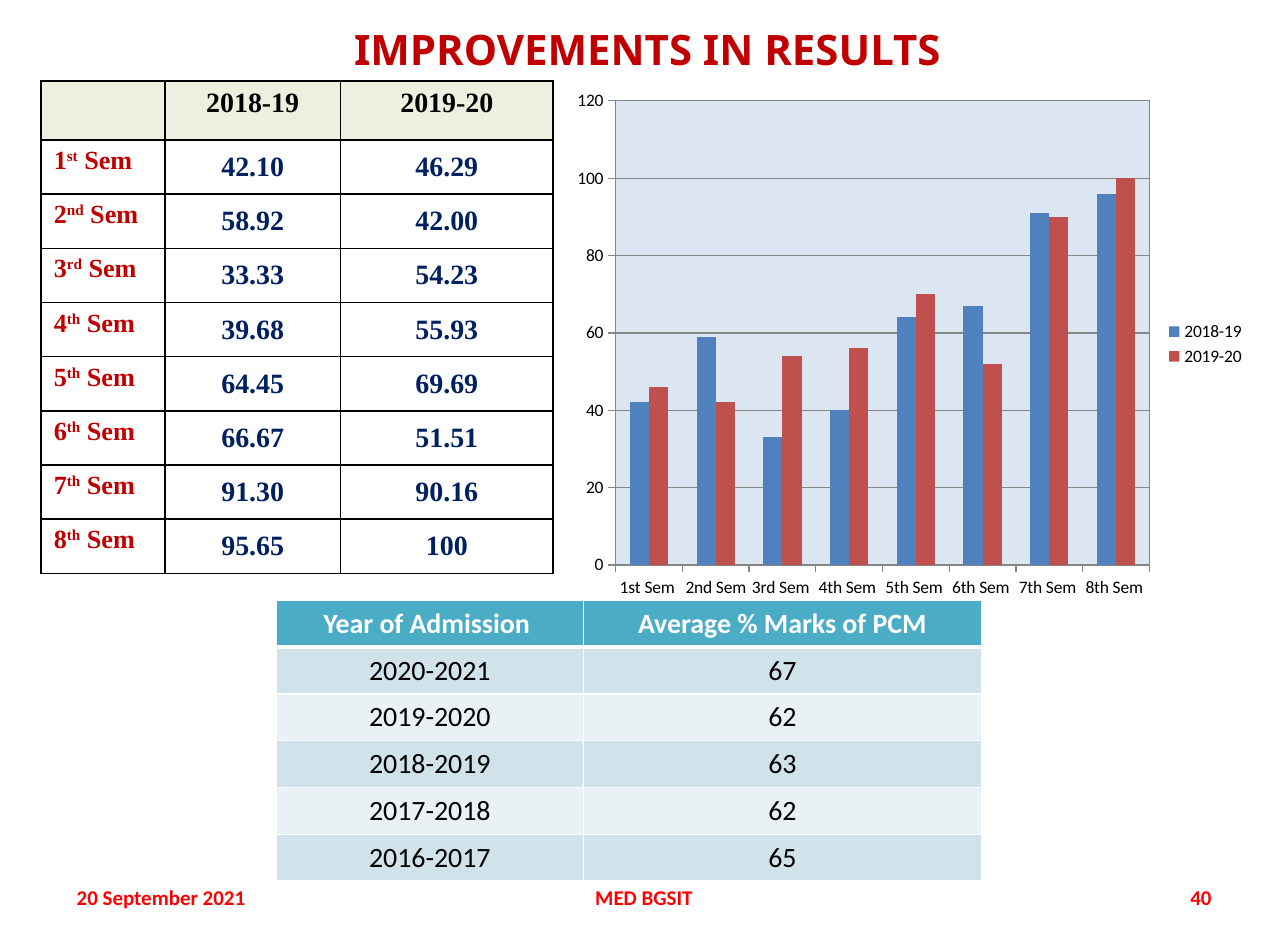
"""Build the slide that compares semester results and admission marks."""
from dataclasses import dataclass

from lxml.etree import SubElement
from pptx import Presentation
from pptx.chart.data import CategoryChartData
from pptx.dml.color import RGBColor
from pptx.enum.chart import XL_CHART_TYPE as ChartType
from pptx.enum.chart import XL_LEGEND_POSITION as LegendPosition
from pptx.enum.chart import XL_TICK_MARK as TickMark
from pptx.enum.text import MSO_ANCHOR as Anchor
from pptx.enum.text import MSO_AUTO_SIZE as AutoSize
from pptx.enum.text import PP_ALIGN as Align
from pptx.oxml.ns import qn
from pptx.util import Inches, Pt

WIDTH, HEIGHT = Inches(10.24), Inches(7.48)
PLAIN_TABLE_STYLE = "{2D5ABB26-0587-4C30-8999-92F81FD0307C}"

YEARS = ("2018-19", "2019-20")
SEMESTERS = [
    ("1", "st", "42.10", "46.29"),
    ("2", "nd", "58.92", "42.00"),
    ("3", "rd", "33.33", "54.23"),
    ("4", "th", "39.68", "55.93"),
    ("5", "th", "64.45", "69.69"),
    ("6", "th", "66.67", "51.51"),
    ("7", "th", "91.30", "90.16"),
    ("8", "th", "95.65", "100"),
]
ADMISSIONS = [
    ("Year of Admission ", "Average % Marks of PCM"),
    ("2020-2021", "67"),
    ("2019-2020", "62"),
    ("2018-2019", "63"),
    ("2017-2018", "62"),
    ("2016-2017", "65"),
]


@dataclass(frozen=True)
class Theme:
    """Colours, fonts and type sizes of the slide."""

    black: str = "000000"
    white: str = "FFFFFF"
    dark_red: str = "C00000"
    footer_red: str = "FF0000"
    navy: str = "002060"
    pale_green: str = "EBF1DE"
    teal: str = "4BACC6"
    bands: tuple = ("D0E3EA", "E9F1F5")
    plot: str = "DCE6F2"
    axis: str = "868686"
    series: tuple = ("4F81BD", "C0504D")
    title_font: str = "Noto Sans"
    body_font: str = "Calibri"
    results_font: str = "Times New Roman"
    title_size: int = 24
    table_size: int = 16
    semester_size: int = 15
    footer_size: int = 12
    chart_size: int = 10


THEME = Theme()


def across(percent):
    """Return a share of the slide's width."""
    return round(WIDTH * percent / 100)


def down(percent):
    """Return a share of the slide's height."""
    return round(HEIGHT * percent / 100)


def area(left, top, width, height):
    """Return a box given in percent of the slide."""
    return across(left), down(top), across(width), down(height)


def style_font(font, name, size, color, bold=False):
    """Set the look of a font."""
    font.name, font.size, font.bold = name, Pt(size), bold
    font.color.rgb = RGBColor.from_string(color)


def fill_solid(fill, color):
    """Fill with one colour."""
    fill.solid()
    fill.fore_color.rgb = RGBColor.from_string(color)


def add_solid_fill(parent, color):
    """Append a solid fill element."""
    SubElement(SubElement(parent, qn("a:solidFill")), qn("a:srgbClr"), val=color)


def write(frame, text, align, name, size, color, bold=False):
    """Write one paragraph into a text frame."""
    paragraph = frame.paragraphs[0]
    paragraph.alignment = align
    style_font(paragraph.font, name, size, color, bold)
    paragraph.add_run().text = text
    return paragraph


def set_title(slide, text):
    """Place and format the title."""
    title = slide.shapes.title
    title.left, title.top, title.width, title.height = area(15.15, 1.85, 70.2, 6.7)
    frame = title.text_frame
    frame.auto_size, frame.vertical_anchor = AutoSize.NONE, Anchor.TOP
    write(frame, text, Align.CENTER, THEME.title_font, THEME.title_size, THEME.dark_red, True)


def add_footer(slide, text, left, width, align):
    """Add one part of the footer line."""
    frame = slide.shapes.add_textbox(*area(left, 92.65, width, 5.35)).text_frame
    frame.word_wrap, frame.vertical_anchor = True, Anchor.MIDDLE
    write(frame, text, align, THEME.body_font, THEME.footer_size, THEME.footer_red, True)


def add_plain_table(slide, left, top, columns, rows):
    """Add an unstyled table with the given column widths and row heights."""
    box = area(left, top, sum(columns), sum(rows))
    table = slide.shapes.add_table(len(rows), len(columns), *box).table
    table._tbl.tblPr.find(qn("a:tableStyleId")).text = PLAIN_TABLE_STYLE
    table.horz_banding = False
    for column, width in zip(table.columns, columns):
        column.width = across(width)
    for row, height in zip(table.rows, rows):
        row.height = down(height)
    return table


def format_cell(cell, border, fill=None, top=1, bottom=1):
    """Set the borders of a cell, then its fill."""
    properties = cell._tc.get_or_add_tcPr()
    for side, width in (("lnL", 1), ("lnR", 1), ("lnT", top), ("lnB", bottom)):
        line = SubElement(properties, qn(f"a:{side}"), w=str(Pt(width)))
        add_solid_fill(line, border)
    if fill:
        fill_solid(cell.fill, fill)
    else:
        cell.fill.background()


def write_semester(cell, number, suffix):
    """Write a semester name with a raised ordinal suffix."""
    paragraph = write(cell.text_frame, number, Align.LEFT, THEME.results_font,
                      THEME.semester_size, THEME.dark_red, True)
    raised = paragraph.add_run()
    raised.text = suffix
    raised._r.get_or_add_rPr().set("baseline", "30000")
    paragraph.add_run().text = " Sem"


def add_results_table(slide):
    """Add the table of results by semester."""
    rows = [6.25] + [5.76] * len(SEMESTERS)
    table = add_plain_table(slide, 3.2, 8.62, [9.6, 13.65, 16.5], rows)
    for index, text in enumerate(("",) + YEARS):
        cell = table.cell(0, index)
        format_cell(cell, THEME.black, THEME.pale_green)
        if text:
            write(cell.text_frame, text, Align.CENTER, THEME.results_font,
                  THEME.table_size, THEME.black, True)
    for row, (number, suffix, *marks) in enumerate(SEMESTERS, 1):
        name_cell = table.cell(row, 0)
        format_cell(name_cell, THEME.black)
        write_semester(name_cell, number, suffix)
        for column, mark in enumerate(marks, 1):
            cell = table.cell(row, column)
            format_cell(cell, THEME.black)
            cell.vertical_anchor = Anchor.MIDDLE
            cell.margin_left = cell.margin_right = cell.margin_top = cell.margin_bottom = 0
            write(cell.text_frame, mark, Align.CENTER, THEME.results_font,
                  THEME.table_size, THEME.navy, True)


def add_admissions_table(slide):
    """Add the banded table of marks by year of admission."""
    table = add_plain_table(slide, 21.45, 63.8, [23.85, 30.9], [4.68] * len(ADMISSIONS))
    for row, texts in enumerate(ADMISSIONS):
        header = row == 0
        fill = THEME.teal if header else THEME.bands[(row - 1) % 2]
        for column, text in enumerate(texts):
            cell = table.cell(row, column)
            format_cell(cell, THEME.white, fill, 3 if row == 1 else 1, 3 if header else 1)
            write(cell.text_frame, text, Align.CENTER, THEME.body_font, THEME.table_size,
                  THEME.white if header else THEME.black, header)


def add_results_chart(slide):
    """Add the column chart of results by semester."""
    data = CategoryChartData()
    data.categories = [f"{number}{suffix} Sem " for number, suffix, *_ in SEMESTERS]
    for index, year in enumerate(YEARS, 2):
        data.add_series(f"{year} ", [round(float(semester[index])) for semester in SEMESTERS])
    box = area(43.75, 8.56, 54.2, 56)
    chart = slide.shapes.add_chart(ChartType.COLUMN_CLUSTERED, *box, data).chart
    style_font(chart.font, THEME.body_font, THEME.chart_size, THEME.black)
    chart.has_title = False
    chart.has_legend = True
    chart.legend.position, chart.legend.include_in_layout = LegendPosition.RIGHT, False
    plot = chart.plots[0]
    plot.gap_width, plot.overlap, plot.vary_by_categories = 150, 0, False
    for series, color in zip(plot.series, THEME.series):
        fill_solid(series.format.fill, color)
    value_axis = chart.value_axis
    value_axis.minimum_scale, value_axis.maximum_scale, value_axis.major_unit = 0, 120, 20
    value_axis.has_major_gridlines = True
    for axis in (chart.category_axis, value_axis):
        axis.major_tick_mark = TickMark.OUTSIDE
    for item in (chart.category_axis, value_axis, value_axis.major_gridlines):
        item.format.line.color.rgb = RGBColor.from_string(THEME.axis)
    properties = SubElement(chart._chartSpace.chart.plotArea, qn("c:spPr"))
    add_solid_fill(properties, THEME.plot)
    add_solid_fill(SubElement(properties, qn("a:ln")), THEME.axis)


def main():
    """Build and save the slide."""
    presentation = Presentation()
    presentation.slide_width, presentation.slide_height = WIDTH, HEIGHT
    slide = presentation.slides.add_slide(presentation.slide_layouts[5])
    set_title(slide, "IMPROVEMENTS IN RESULTS")
    add_results_table(slide)
    add_results_chart(slide)
    add_admissions_table(slide)
    add_footer(slide, "20 September 2021", 5, 23.33, Align.LEFT)
    add_footer(slide, "MED BGSIT", 34.2, 31.6, Align.CENTER)
    add_footer(slide, "40", 71.7, 23.33, Align.RIGHT)
    presentation.save("out.pptx")


if __name__ == "__main__":
    main()
